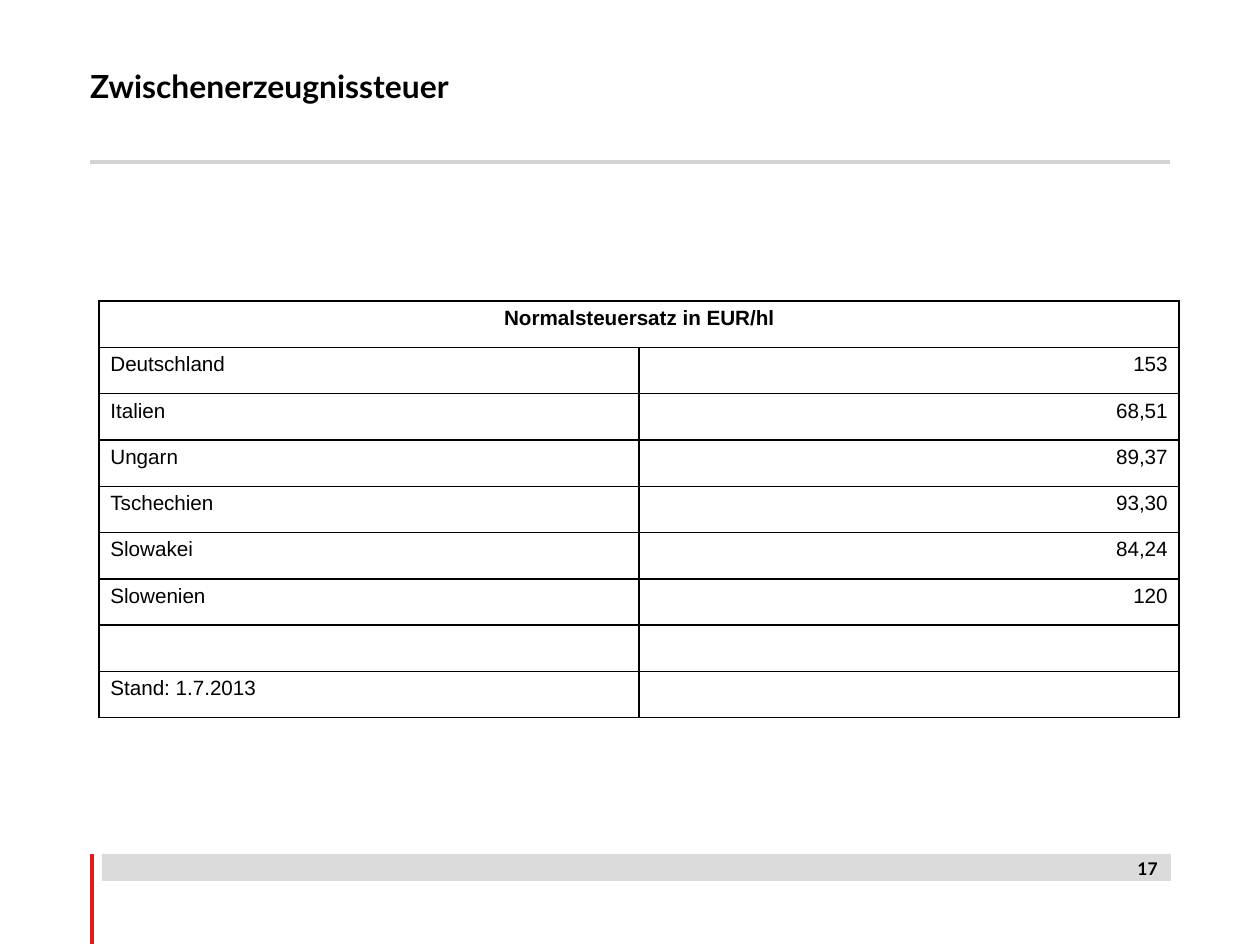
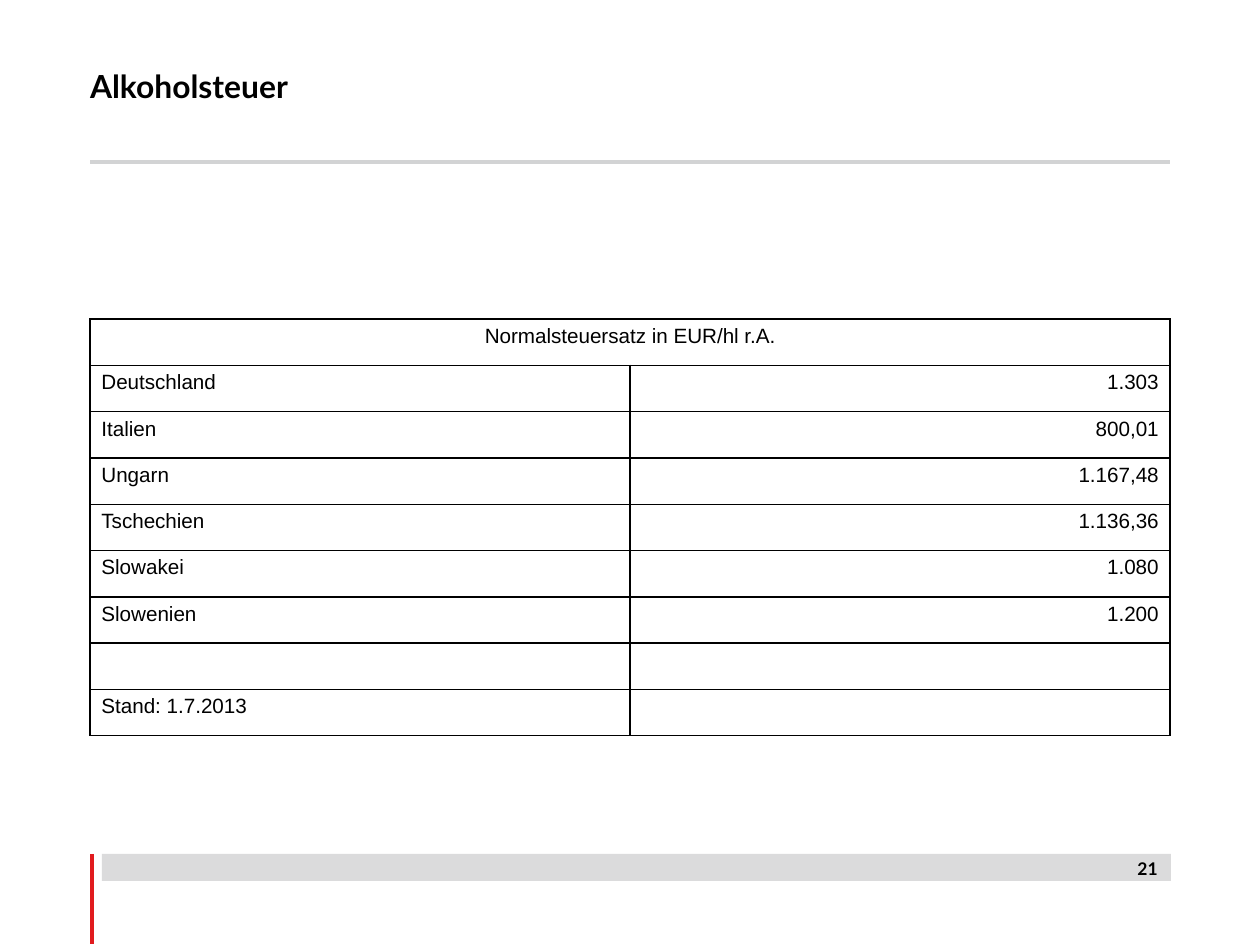
"""Build two slides with tax rate tables in a shared frame."""
from dataclasses import dataclass

from lxml.etree import SubElement
from pptx import Presentation
from pptx.dml.color import RGBColor
from pptx.enum.shapes import MSO_CONNECTOR as Connector, MSO_SHAPE as Shape
from pptx.enum.text import MSO_ANCHOR as Anchor, PP_ALIGN as Align
from pptx.oxml.ns import qn
from pptx.util import Emu, Pt

PX = 8000
BLACK, WHITE, GREY, RED = "000000", "FFFFFF", "D2D3D4", "E11B1E"
TITLE_FONT, TABLE_FONT = "Lato", "Arial"
COUNTRIES = ("Deutschland", "Italien", "Ungarn", "Tschechien", "Slowakei", "Slowenien")
DATE_NOTE = "Stand: 1.7.2013"


@dataclass(frozen=True)
class Rule:
    start: tuple[int, int]
    end: tuple[int, int]
    color: str


@dataclass(frozen=True)
class TextStyle:
    font: str
    size: int
    bold: bool = False
    align: Align = Align.LEFT


@dataclass(frozen=True)
class TaxPage:
    title: str
    number: str
    header: str
    header_bold: bool
    rates: tuple[str, ...]
    left: int
    top: int


RULES = (
    Rule((90, 162), (1170, 162), GREY),
    Rule((92, 854), (92, 944), RED),
)
TITLE_STYLE = TextStyle(TITLE_FONT, 20, bold=True)
NUMBER_STYLE = TextStyle(TITLE_FONT, 11, bold=True, align=Align.RIGHT)
LABEL_STYLE = TextStyle(TABLE_FONT, 13)
RATE_STYLE = TextStyle(TABLE_FONT, 13, align=Align.RIGHT)

PAGES = (
    TaxPage("Zwischenerzeugnissteuer", "17", "Normalsteuersatz in EUR/hl", True,
            ("153", "68,51", "89,37", "93,30", "84,24", "120"), 99, 301),
    TaxPage("Alkoholsteuer", "21", "Normalsteuersatz in EUR/hl r.A.", False,
            ("1.303", "800,01", "1.167,48", "1.136,36", "1.080", "1.200"), 90, 319),
)


def px(*lengths: int) -> list[Emu]:
    return [Emu(length * PX) for length in lengths]


def rgb(color: str) -> RGBColor:
    return RGBColor.from_string(color)


def write(frame, text: str, style: TextStyle) -> None:
    para = frame.paragraphs[0]
    para.alignment = style.align
    span = para.add_run()
    span.text = text
    span.font.name = style.font
    span.font.size = Pt(style.size)
    span.font.bold = style.bold
    span.font.color.rgb = rgb(BLACK)


def add_text(page, area: tuple[int, int, int, int], text: str, style: TextStyle):
    frame = page.shapes.add_textbox(*px(*area)).text_frame
    frame.word_wrap = True
    write(frame, text, style)
    return frame


def add_rule(page, rule: Rule) -> None:
    line = page.shapes.add_connector(Connector.STRAIGHT, *px(*rule.start, *rule.end))
    line.line.color.rgb = rgb(rule.color)
    line.line.width = Pt(2.84)
    SubElement(line._element.spPr, qn("a:effectLst"))


def add_band(page) -> None:
    band = page.shapes.add_shape(Shape.RECTANGLE, *px(102, 854, 1069, 27))
    band.shadow.inherit = False
    band.fill.solid()
    band.fill.fore_color.rgb = rgb(GREY)
    color = band._element.spPr.find(qn("a:solidFill")).find(qn("a:srgbClr"))
    SubElement(color, qn("a:alpha"), val="80000")
    band.line.fill.background()


def format_cell(cell) -> None:
    properties = cell._tc.get_or_add_tcPr()
    for side in ("lnL", "lnR", "lnT", "lnB"):
        border = SubElement(properties, qn(f"a:{side}"), w=str(Pt(1)))
        fill = SubElement(border, qn("a:solidFill"))
        SubElement(fill, qn("a:srgbClr"), val=BLACK)
    cell.fill.solid()
    cell.fill.fore_color.rgb = rgb(WHITE)


def add_rates(page, content: TaxPage) -> None:
    rows = [*zip(COUNTRIES, content.rates), ("", ""), (DATE_NOTE, "")]
    area = px(content.left, content.top, 1080, 417)
    table = page.shapes.add_table(len(rows) + 1, 2, *area).table
    table.first_row = table.horz_banding = False
    for cell in table.iter_cells():
        format_cell(cell)
    header = table.cell(0, 0)
    header.merge(table.cell(0, 1))
    header_style = TextStyle(TABLE_FONT, 13, content.header_bold, Align.CENTER)
    write(header.text_frame, content.header, header_style)
    for index, row in enumerate(rows, start=1):
        for column, (text, style) in enumerate(zip(row, (LABEL_STYLE, RATE_STYLE))):
            if text:
                write(table.cell(index, column).text_frame, text, style)


def add_page(deck, content: TaxPage) -> None:
    page = deck.slides.add_slide(deck.slide_layouts[6])
    for rule in RULES:
        add_rule(page, rule)
    add_band(page)
    title = add_text(page, (90, 49, 832, 74), content.title, TITLE_STYLE)
    title.vertical_anchor = Anchor.MIDDLE
    title.margin_left = title.margin_right = title.margin_top = title.margin_bottom = 0
    add_rates(page, content)
    add_text(page, (1089, 852, 80, 43), content.number, NUMBER_STYLE)


def main() -> None:
    deck = Presentation()
    deck.slide_width, deck.slide_height = px(1260, 945)
    for content in PAGES:
        add_page(deck, content)
    deck.save("out.pptx")


if __name__ == "__main__":
    main()
